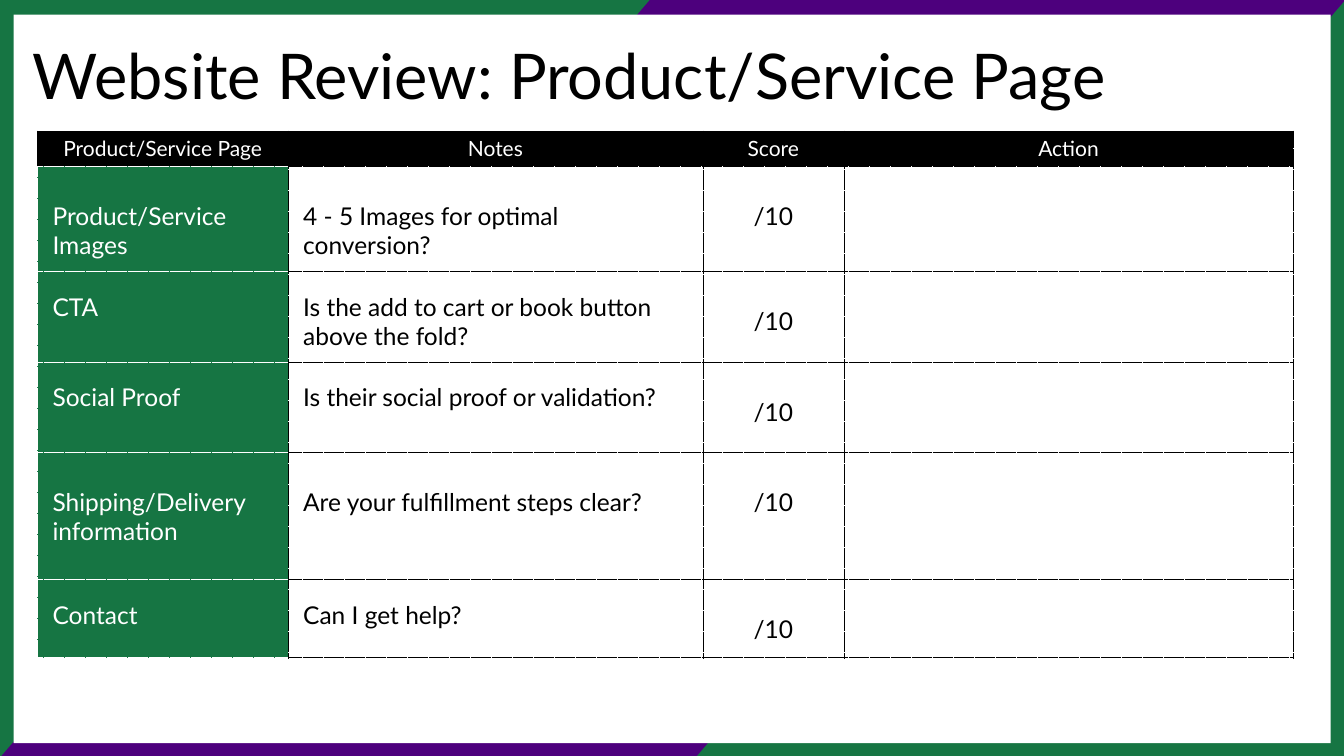
from dataclasses import dataclass

from lxml.etree import SubElement
from pptx import Presentation
from pptx.dml.color import RGBColor
from pptx.enum.shapes import MSO_SHAPE as Preset
from pptx.enum.text import MSO_ANCHOR as Anchor, MSO_AUTO_SIZE as AutoSize, PP_ALIGN as Align
from pptx.oxml.ns import qn
from pptx.util import Pt

GREEN = RGBColor(0x16, 0x75, 0x43)
PURPLE = RGBColor(0x4D, 0x00, 0x7D)
BLACK = RGBColor(0, 0, 0)
WHITE = RGBColor(0xFF, 0xFF, 0xFF)
FONT = "Lato"
WIDTH, HEIGHT = 1920, 1080

HEADINGS = ("Product/Service Page", "Notes", "Score", "Action")
COLUMN_WIDTHS = (358, 592.5, 201.5, 642)
HEADER_HEIGHT = 50
SIDE, NARROW, HIGH, LOW, BOTTOM = 21.6, 7.2, 50, 29.5, 16


@dataclass(frozen=True)
class Check:
    topic: str
    note: str
    height: float
    top_inset: float


CHECKS = (
    Check("Product/Service Images", "4 - 5 Images for optimal conversion?", 117, HIGH),
    Check("CTA", "Is the add to cart or book button above the fold?", 99, LOW),
    Check("Social Proof", "Is their social proof or validation?", 129, LOW),
    Check("Shipping/Delivery information", "Are your fulfillment steps clear?", 181.5, HIGH),
    Check("Contact", "Can I get help?", 112, LOW),
)


@dataclass(frozen=True)
class CellStyle:
    fill: RGBColor
    color: RGBColor
    size: float
    align: Align
    insets: tuple[float, float, float, float]  # left, top, right, bottom
    borders: tuple[RGBColor, RGBColor, RGBColor, RGBColor] = (BLACK,) * 4  # L, R, T, B


def apply(target, values: dict) -> None:
    for name, value in values.items():
        setattr(target, name, value)


def paint(shape, color: RGBColor) -> None:
    shape.shadow.inherit = False
    shape.fill.solid()
    shape.fill.fore_color.rgb = color
    shape.line.fill.background()


def write(paragraph, text: str, size: float, color: RGBColor, align: Align) -> None:
    paragraph.alignment = align
    run = paragraph.add_run()
    run.text = text
    apply(run.font, {"name": FONT, "size": Pt(size)})
    run.font.color.rgb = color


def add_triangle(slide, corners: list[tuple[float, float]]) -> None:
    outline = slide.shapes.build_freeform(*corners[0], scale=Pt(1))
    outline.add_line_segments(corners[1:], close=True)
    paint(outline.convert_to_shape(), GREEN)


def add_borders(cell, colors: tuple[RGBColor, ...]) -> None:
    properties = cell._tc.get_or_add_tcPr()
    for side, color in zip("LRTB", colors):
        line = SubElement(properties, qn(f"a:ln{side}"), w=str(Pt(0.75)))
        fill = SubElement(line, qn("a:solidFill"))
        SubElement(fill, qn("a:srgbClr"), val=str(color))
        SubElement(line, qn("a:prstDash"), val="dot")


def fill_cell(cell, text: str, style: CellStyle) -> None:
    add_borders(cell, style.borders)
    cell.fill.solid()
    cell.fill.fore_color.rgb = style.fill
    sides = ("margin_left", "margin_top", "margin_right", "margin_bottom")
    apply(cell, {side: Pt(inset) for side, inset in zip(sides, style.insets)})
    cell.vertical_anchor = Anchor.TOP
    if text:
        write(cell.text_frame.paragraphs[0], text, style.size, style.color, style.align)


def add_review_table(slide) -> None:
    heights = (HEADER_HEIGHT, *(check.height for check in CHECKS))
    table = slide.shapes.add_table(
        len(heights), len(HEADINGS), Pt(53.5), Pt(187),
        Pt(sum(COLUMN_WIDTHS)), Pt(sum(heights))).table
    apply(table, {"first_row": False, "horz_banding": False})
    for column, width in zip(table.columns, COLUMN_WIDTHS):
        column.width = Pt(width)
    for row, height in zip(table.rows, heights):
        row.height = Pt(height)

    # Header row
    header = CellStyle(BLACK, WHITE, 30, Align.CENTER, (NARROW,) * 4,
                       (BLACK, BLACK, BLACK, WHITE))
    for cell, heading in zip(table.rows[0].cells, HEADINGS):
        fill_cell(cell, heading, header)

    # One row per check
    for row, check in zip(list(table.rows)[1:], CHECKS):
        wide = (SIDE, check.top_inset, SIDE, BOTTOM)
        topic = CellStyle(GREEN, WHITE, 35, Align.LEFT, wide, (WHITE, BLACK, WHITE, WHITE))
        note = CellStyle(WHITE, BLACK, 35, Align.LEFT, wide)
        score = CellStyle(WHITE, BLACK, 35, Align.CENTER, (NARROW, HIGH, NARROW, NARROW))
        texts = (check.topic, check.note, "/10", "")
        for cell, text, style in zip(row.cells, texts, (topic, note, score, score)):
            fill_cell(cell, text, style)


def main() -> None:
    deck = Presentation()
    apply(deck, {"slide_width": Pt(WIDTH), "slide_height": Pt(HEIGHT)})
    slide = deck.slides.add_slide(deck.slide_layouts[5])

    # Two-colour frame around a white panel
    slide.background.fill.solid()
    slide.background.fill.fore_color.rgb = PURPLE
    add_triangle(slide, [(928, 0), (0, 1082), (0, 0)])
    add_triangle(slide, [(994, 1082), (1922, 0), (1922, 1082)])
    panel = slide.shapes.add_shape(Preset.RECTANGLE, Pt(19.5), Pt(21), Pt(1881.5), Pt(1040.5))
    paint(panel, WHITE)

    # Title, raised above the panel
    title = slide.shapes.title
    apply(title, {"left": Pt(39.5), "top": Pt(49), "width": Pt(1636.5), "height": Pt(87)})
    apply(title.text_frame, {"word_wrap": True, "auto_size": AutoSize.NONE,
                             "vertical_anchor": Anchor.TOP})
    write(title.text_frame.paragraphs[0], "Website Review: Product/Service Page",
          90, BLACK, Align.LEFT)
    panel._element.addnext(title._element)

    add_review_table(slide)
    deck.save("out.pptx")


if __name__ == "__main__":
    main()
